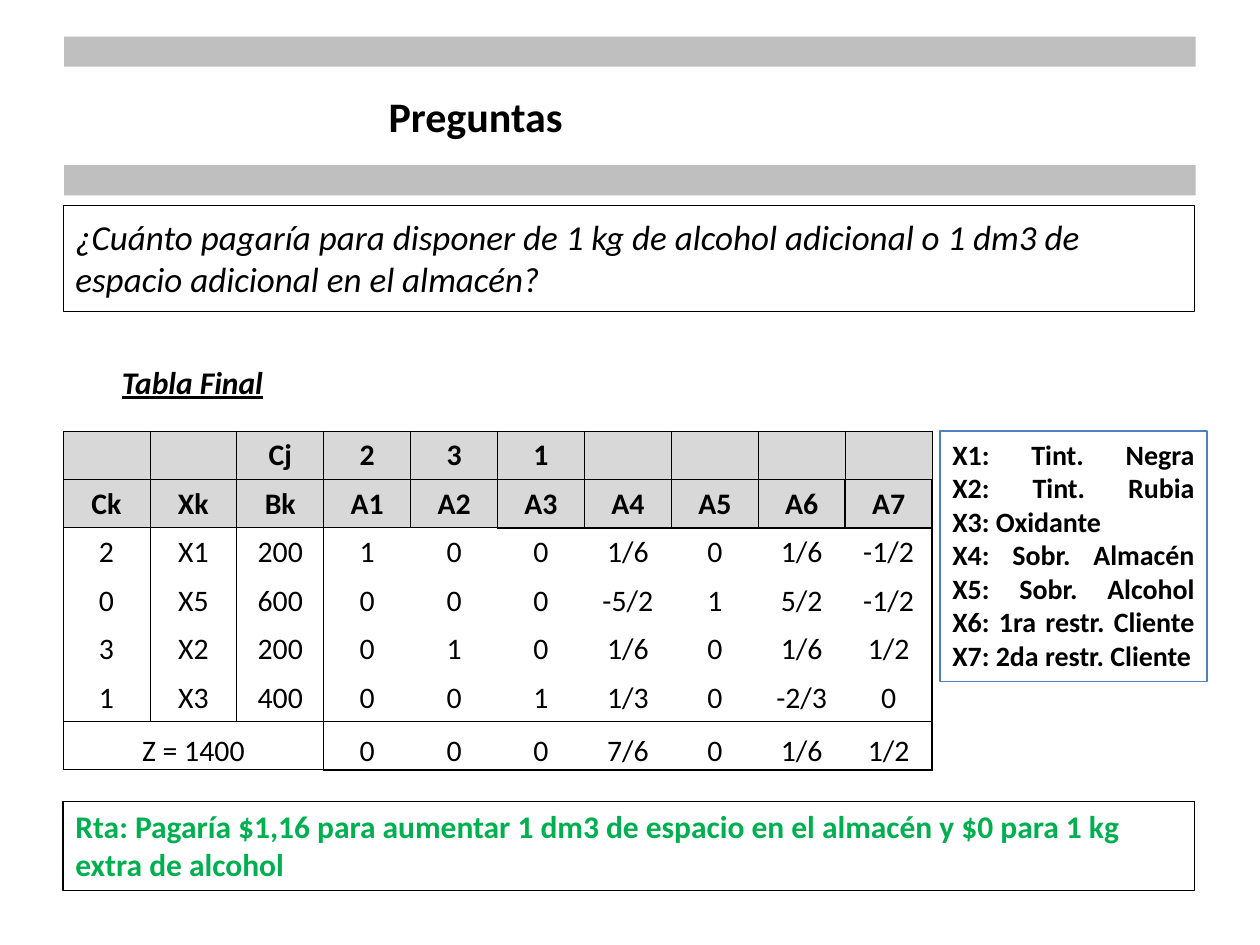
from copy import deepcopy
from dataclasses import dataclass

from lxml.etree import SubElement
from pptx import Presentation
from pptx.dml.color import RGBColor
from pptx.enum.shapes import MSO_SHAPE
from pptx.enum.text import MSO_ANCHOR, PP_ALIGN
from pptx.oxml.ns import qn
from pptx.util import Inches, Pt

SLIDE_WIDTH, SLIDE_HEIGHT = Inches(10), Inches(7.5)
FONT = "Calibri"
LEFT, FULL_WIDTH = 5, 89.8  # percent of the slide's width

TABLE_ROWS = [
    ["", "", "Cj", "2", "3", "1", "", "", "", ""],
    ["Ck", "Xk", "Bk", "A1", "A2", "A3", "A4", "A5", "A6", "A7"],
    ["2", "X1", "200", "1", "0", "0", "1/6", "0", "1/6", "-1/2"],
    ["0", "X5", "600", "0", "0", "0", "-5/2", "1", "5/2", "-1/2"],
    ["3", "X2", "200", "0", "1", "0", "1/6", "0", "1/6", "1/2"],
    ["1", "X3", "400", "0", "0", "1", "1/3", "0", "-2/3", "0"],
    ["Z = 1400", "", "", "0", "0", "0", "7/6", "0", "1/6", "1/2"],
]
HEADER_ROWS = 2
BASIS_COLUMNS = 3
HEAVY_COLUMN = 5  # from here on the header is ruled with the thicker line
THIN, THICK = 0.5, 1

LEGEND = [
    ["X1: Tint. Negra", "X2: Tint. Rubia", "X3: Oxidante"],
    ["X4: Sobr. Almacén", "X5: Sobr. Alcohol", "X6: 1ra restr. Cliente", "X7: 2da restr. Cliente"],
]


@dataclass
class Box:
    """A region given in percent of the slide's width and height."""
    left: float
    top: float
    width: float
    height: float

    def lengths(self):
        return (int(SLIDE_WIDTH * self.left / 100), int(SLIDE_HEIGHT * self.top / 100),
                int(SLIDE_WIDTH * self.width / 100), int(SLIDE_HEIGHT * self.height / 100))


def color(hex_value):
    return RGBColor.from_string(hex_value)


def write(frame, text, size, hex_value="000000", align=PP_ALIGN.LEFT,
          bold=False, italic=False, underline=False):
    frame.text = text
    for para in frame.paragraphs:
        para.alignment = align
        for span in para.runs:
            font = span.font
            font.name, font.size, font.color.rgb = FONT, Pt(size), color(hex_value)
            font.bold, font.italic, font.underline = bold, italic, underline
        for line_break in para._p.findall(qn("a:br")):
            line_break.append(deepcopy(para.runs[0].font._element))


def add_rectangle(page, box, fill=None, line=None, line_width=0.75):
    shape = page.shapes.add_shape(MSO_SHAPE.RECTANGLE, *box.lengths())
    shape.shadow.inherit = False
    if fill:
        shape.fill.solid()
        shape.fill.fore_color.rgb = color(fill)
    else:
        shape.fill.background()
    if line:
        shape.line.color.rgb = color(line)
        shape.line.width = Pt(line_width)
    else:
        shape.line.fill.background()
    shape.text_frame.word_wrap = True
    shape.text_frame.vertical_anchor = MSO_ANCHOR.TOP
    return shape


def add_heading(page, box):
    """Title between two grey bars."""
    bar_height = 3.2
    for top in (box.top, box.top + box.height - bar_height):
        add_rectangle(page, Box(box.left, top, box.width, bar_height), fill="BFBFBF")
    title = page.shapes.title
    title.left, title.top, title.width, title.height = Box(LEFT, 4, 65.5, 16.5).lengths()
    title.text_frame.vertical_anchor = MSO_ANCHOR.MIDDLE
    write(title.text_frame, "Preguntas", 24, align=PP_ALIGN.CENTER, bold=True)


def add_question(page, box):
    frame = add_rectangle(page, box, line="000000", line_width=THIN).text_frame
    frame.margin_top = Inches(0.08)
    write(frame, "¿Cuánto pagaría para disponer de 1 kg de alcohol adicional "
                 "o 1 dm3 de espacio adicional en el almacén?", 20, italic=True)


def add_caption(page, box):
    frame = page.shapes.add_textbox(*box.lengths()).text_frame
    frame.word_wrap = True
    write(frame, "Tabla Final", 18, bold=True, italic=True, underline=True)


def border_widths(row, column):
    """Widths of the left, right, top and bottom borders; 0 means no line."""
    last_row, last_column = len(TABLE_ROWS) - 1, len(TABLE_ROWS[0]) - 1
    heavy = THICK if column >= HEAVY_COLUMN else THIN
    beside_basis = THIN if column < BASIS_COLUMNS else THICK
    if row == 0:
        return THIN, THIN, THIN, heavy
    if row < HEADER_ROWS:
        right = THICK if column >= HEAVY_COLUMN - 1 else THIN
        return heavy, right, heavy, heavy
    outer_right = THICK if column == last_column else 0
    if row == last_row:
        left = {0: THIN, BASIS_COLUMNS: THICK}.get(column, 0)
        right = THICK if column == 0 else outer_right
        return left, right, beside_basis, beside_basis
    left = THIN if column <= BASIS_COLUMNS else 0
    right = THIN if column < BASIS_COLUMNS else outer_right
    top = heavy if row == HEADER_ROWS else 0
    bottom = beside_basis if row == last_row - 1 else 0
    return left, right, top, bottom


def set_borders(cell, widths):
    properties = cell._tc.get_or_add_tcPr()
    for side, width in zip("LRTB", widths):
        line = SubElement(properties, qn(f"a:ln{side}"), w=str(int(Pt(width))))
        if width:
            fill = SubElement(line, qn("a:solidFill"))
            SubElement(fill, qn("a:srgbClr"), val="000000")
        else:
            SubElement(line, qn("a:noFill"))


def add_final_table(page, box):
    rows, columns = len(TABLE_ROWS), len(TABLE_ROWS[0])
    table = page.shapes.add_table(rows, columns, *box.lengths()).table
    table.first_row = table.horz_banding = False
    for row, texts in enumerate(TABLE_ROWS):
        header = row < HEADER_ROWS
        for column, text in enumerate(texts):
            cell = table.cell(row, column)
            cell.margin_left = cell.margin_right = cell.margin_top = Inches(0.01)
            cell.margin_bottom = 0
            cell.vertical_anchor = MSO_ANCHOR.BOTTOM if row == rows - 1 else MSO_ANCHOR.MIDDLE
            set_borders(cell, border_widths(row, column))
            if header:
                cell.fill.solid()
                cell.fill.fore_color.rgb = color("D8D8D8")
            else:
                cell.fill.background()
            if text:
                write(cell.text_frame, text, 17, align=PP_ALIGN.CENTER, bold=header)
    table.cell(rows - 1, 0).merge(table.cell(rows - 1, BASIS_COLUMNS - 1))


def add_legend(page, box):
    frame = add_rectangle(page, box, line="4F81BD").text_frame
    text = "\n".join("\v".join(lines) for lines in LEGEND)
    write(frame, text, 16, align=PP_ALIGN.JUSTIFY, bold=True)


def add_answer(page, box):
    frame = add_rectangle(page, box, line="000000").text_frame
    write(frame, "Rta: Pagaría $1,16 para aumentar 1 dm3 de espacio en el almacén "
                 "y $0 para 1 kg extra de alcohol", 18, "00B050", bold=True)


def main():
    deck = Presentation()
    deck.slide_width, deck.slide_height = SLIDE_WIDTH, SLIDE_HEIGHT
    page = deck.slides.add_slide(deck.slide_layouts[5])
    add_heading(page, Box(5.1, 3.87, FULL_WIDTH, 16.8))
    add_caption(page, Box(8.7, 37.73, 61.6, 5.33))
    add_final_table(page, Box(LEFT, 45.6, 69, 35.87))
    add_legend(page, Box(74.6, 45.6, 21.2, 26.53))
    add_question(page, Box(LEFT, 21.73, FULL_WIDTH, 11.2))
    add_answer(page, Box(LEFT, 84.8, FULL_WIDTH, 9.47))
    deck.save("out.pptx")


if __name__ == "__main__":
    main()
